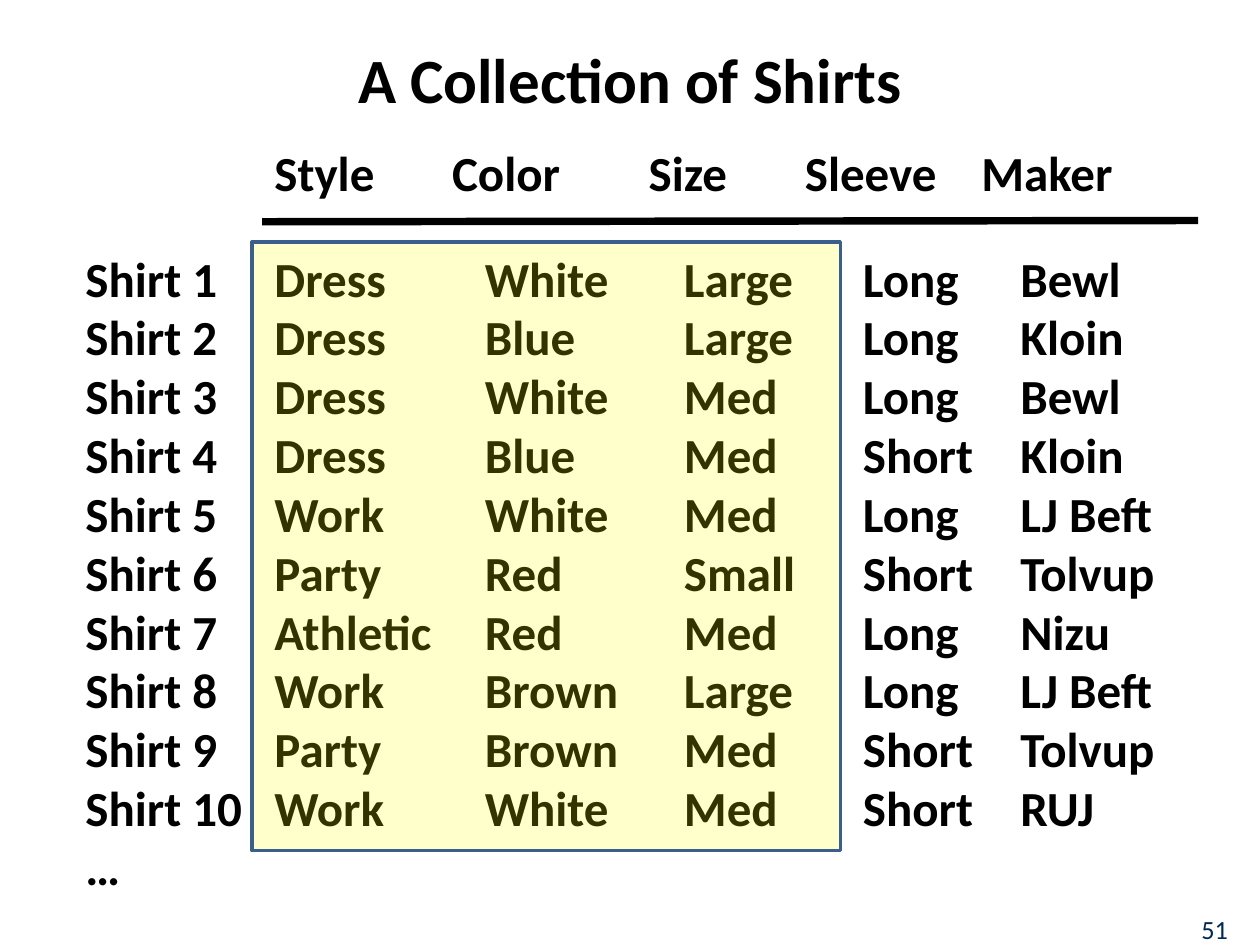
from dataclasses import dataclass

from lxml.etree import SubElement
from pptx import Presentation
from pptx.dml.color import RGBColor
from pptx.enum.shapes import MSO_CONNECTOR, MSO_SHAPE
from pptx.enum.text import MSO_ANCHOR, MSO_AUTO_SIZE, PP_ALIGN
from pptx.oxml.ns import qn
from pptx.util import Inches, Pt

BLACK = RGBColor(0x00, 0x00, 0x00)
NAVY = RGBColor(0x00, 0x29, 0x55)
YELLOW = RGBColor(0xFF, 0xFF, 0x00)
STEEL = RGBColor(0x3A, 0x5F, 0x8C)
FONT = "Calibri"
BODY_SIZE = 28

ROWS_TOP = 1.92
ROW_HEIGHT = 0.47
COLUMN_WIDTH = 1.58
HEADER_LEFT = 2.08


@dataclass(frozen=True)
class Column:
    left: float
    entries: str

    @property
    def lines(self) -> list[str]:
        return self.entries.split(", ")


COLUMNS = [
    Column(0.58, ", ".join(f"Shirt {number}" for number in range(1, 11)) + ", …"),
    Column(2.08, "Dress, Dress, Dress, Dress, Work, Party, Athletic, Work, Party, Work"),
    Column(6.75, "Long, Long, Long, Short, Long, Short, Long, Long, Short, Short"),
    Column(5.33, "Large, Large, Med, Med, Med, Small, Med, Large, Med, Med"),
    Column(3.75, "White, Blue, White, Blue, White, Red, Red, Brown, Brown, White"),
    Column(8.0, "Bewl, Kloin, Bewl, Kloin, LJ Beft, Tolvup, Nizu, LJ Beft, Tolvup, RUJ"),
]
HEADERS = ["Style", "Color", "Size", "Sleeve", "Maker"]
HEADER_TABS = [1.41, 2.97, 4.21, 5.61]


def style(para, size: float, color: RGBColor = BLACK, bold: bool = True) -> None:
    para.font.name = FONT
    para.font.size = Pt(size)
    para.font.bold = bold
    para.font.color.rgb = color


def add_lines(page, left: float, top: float, width: float, lines: list[str]):
    box = page.shapes.add_textbox(
        Inches(left), Inches(top), Inches(width), Inches(len(lines) * ROW_HEIGHT + 0.1))
    frame = box.text_frame
    frame.word_wrap = True
    frame.auto_size = MSO_AUTO_SIZE.SHAPE_TO_FIT_TEXT
    frame.text = "\n".join(lines)
    for para in frame.paragraphs:
        style(para, BODY_SIZE)
    return box


def add_tab_stops(para, stops: list[float]) -> None:
    properties = para._p.get_or_add_pPr()
    tab_list = SubElement(properties, qn("a:tabLst"))
    for stop in stops:
        SubElement(tab_list, qn("a:tab"), pos=str(Inches(stop)), algn="l")
    properties.insert_element_before(tab_list, "a:defRPr", "a:extLst")


def add_title(page, text: str) -> None:
    title = page.shapes.title
    title.left, title.top = Inches(0.5), Inches(0.17)
    title.width, title.height = Inches(9), Inches(0.97)
    title.text_frame.vertical_anchor = MSO_ANCHOR.MIDDLE
    title.text_frame.text = text
    para = title.text_frame.paragraphs[0]
    para.alignment = PP_ALIGN.CENTER
    para.line_spacing = 0.92
    style(para, 36)


def add_header(page) -> None:
    header = add_lines(page, HEADER_LEFT, 1.08, 7.38, ["\t".join(HEADERS)])
    add_tab_stops(header.text_frame.paragraphs[0], HEADER_TABS)
    rule = page.shapes.add_connector(
        MSO_CONNECTOR.STRAIGHT, Inches(HEADER_LEFT), Inches(1.76), Inches(9.51), Inches(1.75))
    rule.line.color.rgb = BLACK
    rule.line.width = Pt(4.25)
    SubElement(rule._element.spPr, qn("a:effectLst"))


def add_highlight(page) -> None:
    highlight = page.shapes.add_shape(
        MSO_SHAPE.RECTANGLE, Inches(2), Inches(ROWS_TOP), Inches(4.67), Inches(4.83))
    highlight.shadow.inherit = False
    highlight.fill.solid()
    highlight.fill.fore_color.rgb = YELLOW
    color = highlight._element.spPr.find(f"{qn('a:solidFill')}/{qn('a:srgbClr')}")
    SubElement(color, qn("a:alpha"), val="20000")
    highlight.line.color.rgb = STEEL
    highlight.line.width = Pt(2)


def add_page_number(page, number: int) -> None:
    box = page.shapes.add_textbox(Inches(9.39), Inches(7.21), Inches(0.5), Inches(0.24))
    frame = box.text_frame
    frame.word_wrap = False
    frame.margin_left = frame.margin_right = Inches(0.07)
    frame.margin_top = frame.margin_bottom = Inches(0.04)
    frame.text = str(number)
    para = frame.paragraphs[0]
    para.alignment = PP_ALIGN.CENTER
    style(para, 15, NAVY, bold=False)


def main() -> None:
    deck = Presentation()
    deck.slide_width, deck.slide_height = Inches(10), Inches(7.5)
    page = deck.slides.add_slide(deck.slide_layouts[5])
    add_title(page, "A Collection of Shirts")
    add_page_number(page, 51)
    add_header(page)
    for column in COLUMNS:
        add_lines(page, column.left, ROWS_TOP, COLUMN_WIDTH, column.lines)
    add_highlight(page)
    deck.save("out.pptx")


if __name__ == "__main__":
    main()
